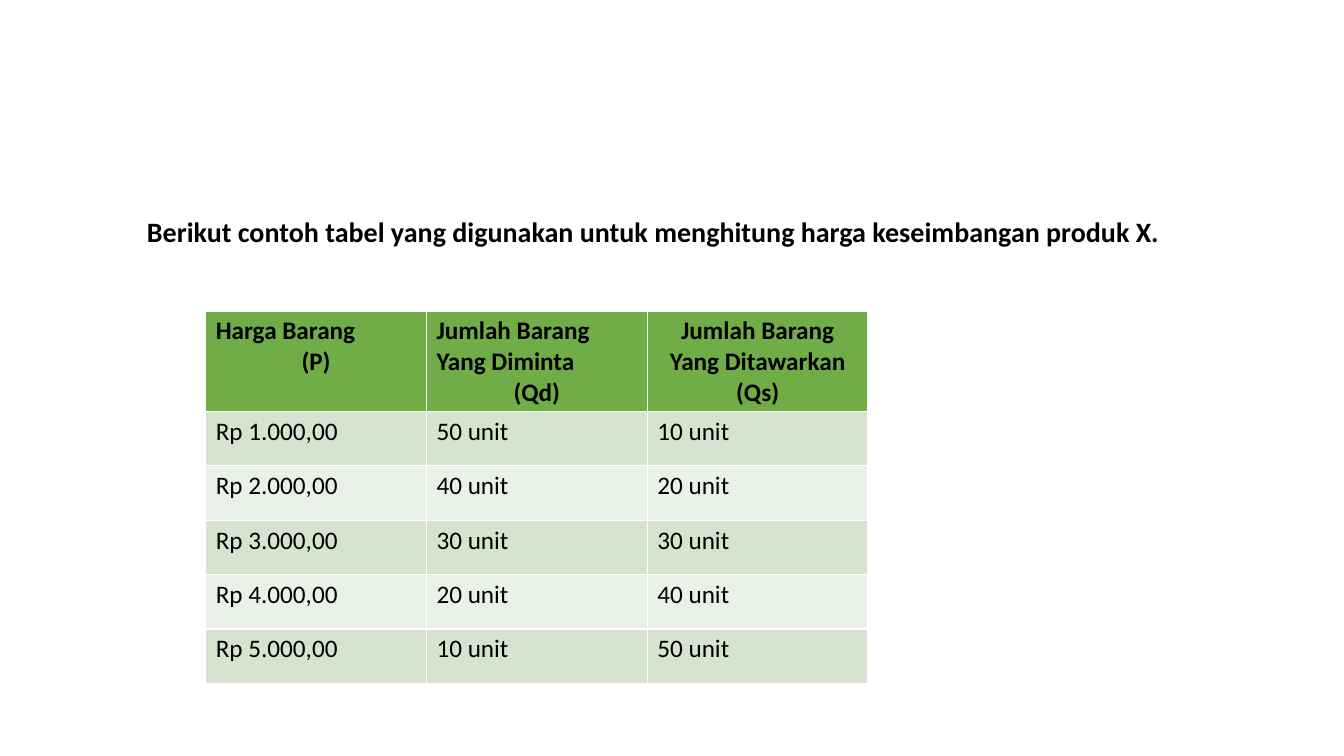
"""Build a slide with a supply and demand table for the equilibrium price of product X."""
from dataclasses import dataclass

from lxml import etree
from pptx import Presentation
from pptx.dml.color import RGBColor
from pptx.enum.text import PP_ALIGN
from pptx.oxml.ns import qn
from pptx.util import Inches, Pt

LEFT, CENTER = PP_ALIGN.LEFT, PP_ALIGN.CENTER
BLACK = RGBColor(0x00, 0x00, 0x00)
WHITE = RGBColor(0xFF, 0xFF, 0xFF)
HEADER_GREEN = RGBColor(0x70, 0xAD, 0x47)
BAND_GREENS = (RGBColor(0xD5, 0xE3, 0xCF), RGBColor(0xEB, 0xF1, 0xE9))
FONT = "Calibri"
SLIDE_WIDTH, SLIDE_HEIGHT = Inches(13.33), Inches(7.5)
COLUMN_WIDTH, HEADER_HEIGHT, ROW_HEIGHT = Inches(2.19), Inches(0.77), Inches(0.54)
TABLE_LEFT, TABLE_TOP = Inches(2.04), Inches(3.08)


@dataclass(frozen=True)
class Line:
    text: str
    align: PP_ALIGN = LEFT


@dataclass(frozen=True)
class Offer:
    price: str
    demanded: int
    supplied: int


INTRO = Line("Berikut contoh tabel yang digunakan untuk menghitung harga keseimbangan produk X.")
HEADINGS = (
    (Line("Harga Barang"), Line("(P)", CENTER)),
    (Line("Jumlah Barang Yang Diminta"), Line("(Qd)", CENTER)),
    (Line("Jumlah Barang Yang Ditawarkan (Qs)", CENTER),),
)
OFFERS = [Offer(f"Rp {step}.000,00", 60 - 10 * step, 10 * step) for step in range(1, 6)]


def write(frame, lines: tuple[Line, ...], size: int, bold: bool) -> None:
    for index, line in enumerate(lines):
        paragraph = frame.paragraphs[0] if index == 0 else frame.add_paragraph()
        paragraph.alignment = line.align
        run = paragraph.add_run()
        run.text = line.text
        run.font.name, run.font.size, run.font.bold = FONT, Pt(size), bold
        run.font.color.rgb = BLACK


def add_borders(cell, top_width: int) -> None:
    properties = cell._tc.get_or_add_tcPr()
    for side, width in (("L", 1), ("R", 1), ("T", top_width), ("B", 1)):
        border = etree.SubElement(properties, qn(f"a:ln{side}"), w=str(Pt(width)))
        fill = etree.SubElement(border, qn("a:solidFill"))
        etree.SubElement(fill, qn("a:srgbClr"), val=str(WHITE))


def fill_cell(cell, lines: tuple[Line, ...], color: RGBColor, is_header: bool) -> None:
    add_borders(cell, 3 if is_header else 1)
    cell.fill.solid()
    cell.fill.fore_color.rgb = color
    write(cell.text_frame, lines, 18, is_header)


def add_intro(slide) -> None:
    intro = slide.shapes.add_textbox(Inches(1.36), Inches(2.08), Inches(11.5), Inches(0.44))
    intro.text_frame.word_wrap = True
    write(intro.text_frame, (INTRO,), 20, True)


def add_market_table(slide) -> None:
    market = slide.shapes.add_table(
        len(OFFERS) + 1, len(HEADINGS), TABLE_LEFT, TABLE_TOP,
        COLUMN_WIDTH * len(HEADINGS), HEADER_HEIGHT + ROW_HEIGHT * len(OFFERS),
    ).table
    for row_index, row in enumerate(market.rows):
        row.height = ROW_HEIGHT if row_index else HEADER_HEIGHT
    for column, heading in enumerate(HEADINGS):
        market.columns[column].width = COLUMN_WIDTH
        fill_cell(market.cell(0, column), heading, HEADER_GREEN, True)
    for index, offer in enumerate(OFFERS):
        values = (offer.price, f"{offer.demanded} unit", f"{offer.supplied} unit")
        for column, value in enumerate(values):
            fill_cell(market.cell(index + 1, column), (Line(value),), BAND_GREENS[index % 2], False)


def main() -> None:
    deck = Presentation()
    deck.slide_width, deck.slide_height = SLIDE_WIDTH, SLIDE_HEIGHT
    slide = deck.slides.add_slide(deck.slide_layouts[6])
    add_intro(slide)
    add_market_table(slide)
    deck.save("out.pptx")


if __name__ == "__main__":
    main()
